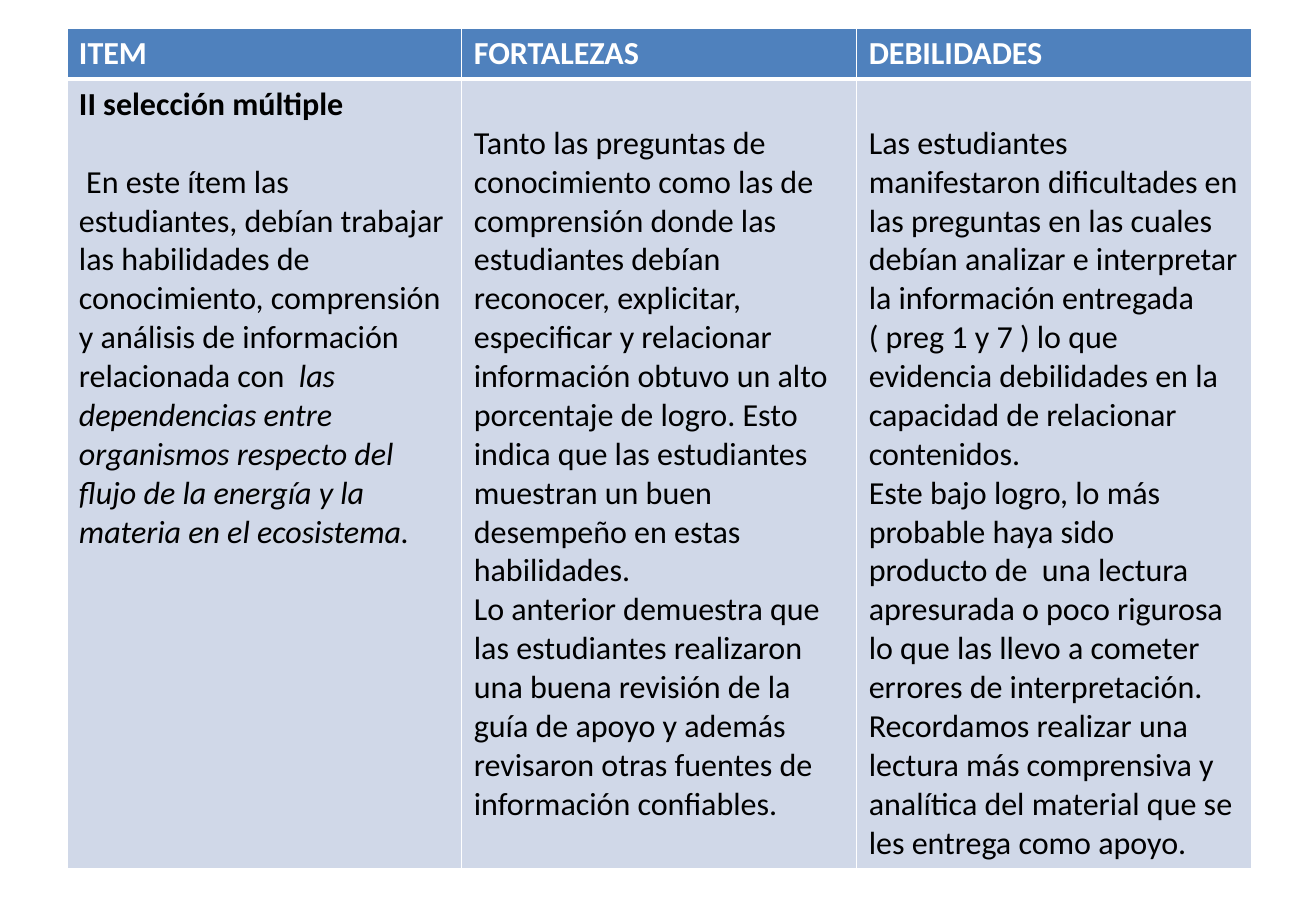
"""Build the slide with the strengths and weaknesses table for item II."""
from lxml.etree import SubElement
from pptx import Presentation
from pptx.dml.color import RGBColor
from pptx.oxml.ns import qn
from pptx.util import Inches, Pt

COLORS = {"header": "4F81BD", "body": "D0D8E8", "light": "FFFFFF", "dark": "000000"}
BOLD, PLAIN, ITALIC = {"bold": True}, {"bold": False}, {"bold": False, "italic": True}
LINE = 0.32
COLUMN_WIDTH = 3.25
ROW_HEIGHTS = [0.41, 6.5]

HEADINGS = ["ITEM", "FORTALEZAS", "DEBILIDADES"]
ITEM = [
    [("II selección múltiple", BOLD)],
    [
        (" En este ítem las estudiantes, debían trabajar las habilidades de "
         "conocimiento, comprensión y análisis de información relacionada con ", PLAIN),
        (" las dependencias entre organismos respecto del flujo de la energía y la "
         "materia en el ecosistema.", ITALIC),
    ],
]
STRENGTHS = [
    [("Tanto las preguntas de conocimiento como las de comprensión donde las "
      "estudiantes debían reconocer, explicitar, especificar y relacionar "
      "información obtuvo un alto porcentaje de logro. Esto indica que las "
      "estudiantes muestran un buen desempeño en estas habilidades.", PLAIN)],
    [("Lo anterior demuestra que las estudiantes realizaron una buena revisión de "
      "la guía de apoyo y además revisaron otras fuentes de información confiables.",
      PLAIN)],
]
WEAKNESSES = [
    [("Las estudiantes manifestaron dificultades en las preguntas en las cuales "
      "debían analizar e interpretar la información entregada  ( preg 1 y 7 ) lo que "
      "evidencia debilidades en la capacidad de relacionar contenidos.", PLAIN)],
    [("Este bajo logro, lo más probable haya sido producto de  una lectura "
      "apresurada o poco rigurosa lo que las llevo a cometer errores de "
      "interpretación.", PLAIN)],
    [("Recordamos realizar una lectura más comprensiva y analítica del material que "
      "se les entrega como apoyo.", PLAIN)],
]
ROWS = [
    ("header", "light", [[[(heading, BOLD)]] for heading in HEADINGS]),
    ("body", "dark", [ITEM, STRENGTHS, WEAKNESSES]),
]
BORDERS = {
    "header": {"lnL": 1, "lnR": 1, "lnT": 1, "lnB": 3},
    "body": {"lnL": 1, "lnR": 1, "lnT": 3, "lnB": 1},
}


def style_cell(cell, kind):
    """Give a cell its borders and fill."""
    properties = cell._tc.get_or_add_tcPr()
    for side, width in BORDERS[kind].items():
        border = SubElement(properties, qn(f"a:{side}"), w=str(Pt(width)))
        fill = SubElement(border, qn("a:solidFill"))
        SubElement(fill, qn("a:srgbClr"), val=COLORS["light"])
    cell.fill.solid()
    cell.fill.fore_color.rgb = RGBColor.from_string(COLORS[kind])


def write_cell(cell, paragraphs, color):
    """Write formatted paragraphs into a cell."""
    for index, spans in enumerate(paragraphs):
        frame = cell.text_frame
        para = frame.add_paragraph() if index else frame.paragraphs[0]
        for text, formats in spans:
            span = para.add_run()
            span.text = text
            span.font.color.rgb = RGBColor.from_string(COLORS[color])
            for name, value in {"name": "Calibri", "size": Pt(19), **formats}.items():
                setattr(span.font, name, value)


deck = Presentation()
deck.slide_width, deck.slide_height = Inches(10.83), Inches(7.5)
page = deck.slides.add_slide(deck.slide_layouts[6])

table = page.shapes.add_table(
    len(ROWS), len(HEADINGS), Inches(0.55), Inches(0.23),
    Inches(COLUMN_WIDTH * len(HEADINGS)), Inches(sum(ROW_HEIGHTS)),
).table
for column in table.columns:
    column.width = Inches(COLUMN_WIDTH)
for row, height in zip(table.rows, ROW_HEIGHTS):
    row.height = Inches(height)

for row, (kind, color, contents) in zip(table.rows, ROWS):
    for cell, paragraphs in zip(row.cells, contents):
        style_cell(cell, kind)
        write_cell(cell, paragraphs, color)

item_cell, *comment_cells = table.rows[1].cells
item_cell.text_frame.paragraphs[1].space_before = Inches(LINE)
for cell in comment_cells:
    cell.margin_top = Inches(0.05 + LINE)

deck.save("out.pptx")
